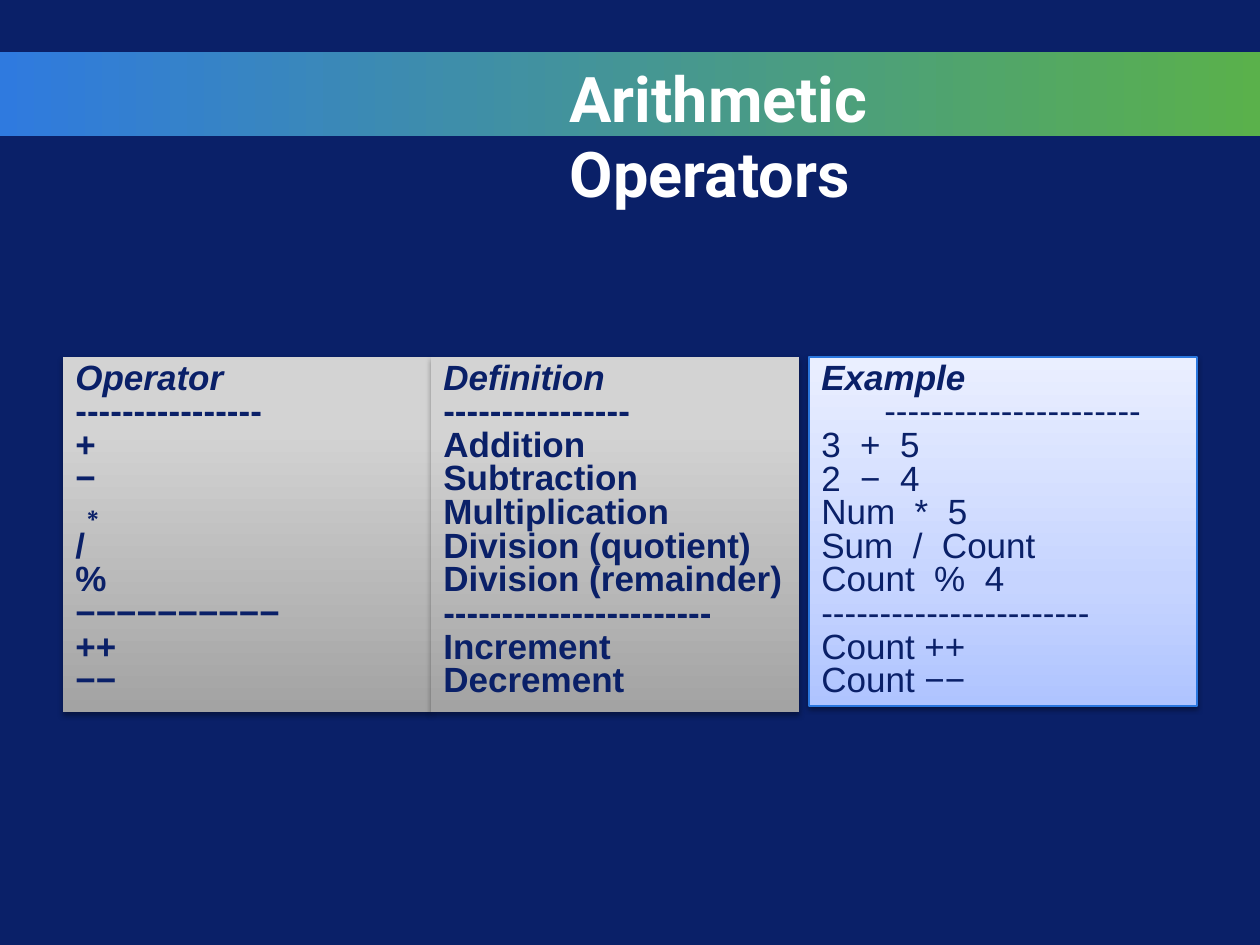
from lxml import etree
from pptx import Presentation
from pptx.dml.color import RGBColor
from pptx.enum.shapes import MSO_SHAPE
from pptx.enum.text import MSO_ANCHOR, MSO_AUTO_SIZE, PP_ALIGN
from pptx.oxml.ns import qn
from pptx.util import Emu, Pt

RECTANGLE = MSO_SHAPE.RECTANGLE
TOP = MSO_ANCHOR.TOP
LEFT = PP_ALIGN.LEFT
NO_AUTOFIT = MSO_AUTO_SIZE.NONE

NAVY = RGBColor(0x0A, 0x20, 0x68)
WHITE = RGBColor(0xFF, 0xFF, 0xFF)
BLUE_LINE = RGBColor(0x2A, 0x77, 0xDE)
BAND_STOPS = [(0, RGBColor(0x2F, 0x7A, 0xDF)), (100, RGBColor(0x5A, 0xB1, 0x4B))]
GRAY_STOPS = [(0, RGBColor(0xA3, 0xA3, 0xA3)), (80, RGBColor(0xD3, 0xD3, 0xD3)),
              (100, RGBColor(0xD4, 0xD4, 0xD4))]
BLUE_STOPS = [(0, RGBColor(0xAF, 0xC4, 0xFF)), (35, RGBColor(0xC6, 0xD4, 0xFF)),
              (100, RGBColor(0xEA, 0xEF, 0xFF))]
PX = 914400 / 126


def px(*lengths):
    """Turn pixel lengths into a list of EMU lengths."""
    return [Emu(round(length * PX)) for length in lengths]


def add_gradient_box(left, top, width, height, stops, angle):
    box = slide.shapes.add_shape(RECTANGLE, *px(left, top, width, height))
    box.shadow.inherit = False
    box.line.fill.background()
    box.fill.gradient()
    box.fill.gradient_angle = angle
    stop_list = box._element.spPr.find(".//" + qn("a:gsLst"))
    for old_stop in list(stop_list):
        stop_list.remove(old_stop)
    for position, color in stops:
        stop = etree.SubElement(stop_list, qn("a:gs"), pos=str(position * 1000))
        etree.SubElement(stop, qn("a:srgbClr"), val=str(color))
    return box


presentation = Presentation()
presentation.slide_width, presentation.slide_height = px(1260, 945)
slide = presentation.slides.add_slide(presentation.slide_layouts[5])
slide.background.fill.solid()
slide.background.fill.fore_color.rgb = NAVY

add_gradient_box(0, 52, 1260, 84, BAND_STOPS, 0)

title = slide.shapes.title
slide.shapes._spTree.append(title._element)  # in front of the band
title.left, title.top, title.width, title.height = px(557, 53, 416, 89)
title.text_frame.text = "Arithmetic Operators"
title.text_frame.word_wrap = True
title.text_frame.auto_size = NO_AUTOFIT
title.text_frame.vertical_anchor = TOP
paragraph = title.text_frame.paragraphs[0]
paragraph.alignment = LEFT
paragraph.font.name = "Roboto"
paragraph.font.size = Pt(36)
paragraph.font.bold = True
paragraph.font.color.rgb = WHITE

# left, width, height, stops, shadow opacity, bold body, hanging indent, text
columns = [
    (809, 388, 349, BLUE_STOPS, 38, False, 63,
     "Example\v----------------------\n3  +  5\n2  −  4\nNum  *  5\nSum  /  Count\n"
     "Count  %  4\n-----------------------\nCount ++\nCount −−"),
    (63, 368, 355, GRAY_STOPS, 35, True, 0,
     "Operator\n----------------\n+\n−\n∗\n/\n%\n−−−−−−−−−−\n++\v−−"),
    (431, 368, 355, GRAY_STOPS, 35, True, 0,
     "Definition\n----------------\nAddition\nSubtraction\nMultiplication\n"
     "Division (quotient)\nDivision (remainder)\n-----------------------\n"
     "Increment\nDecrement"),
]
for left, width, height, stops, opacity, bold, indent, text in columns:
    box = add_gradient_box(left, 357, width, height, stops, 90)
    if stops is BLUE_STOPS:
        box.line.color.rgb = BLUE_LINE
        box.line.width = Pt(0.75)
    effects = box._element.spPr.find(qn("a:effectLst"))
    shadow = etree.SubElement(effects, qn("a:outerShdw"), blurRad=str(Pt(3.1)),
                              dist=str(Pt(1.7)), dir="5400000", rotWithShape="0")
    shadow_color = etree.SubElement(shadow, qn("a:srgbClr"), val="000000")
    etree.SubElement(shadow_color, qn("a:alpha"), val=str(opacity * 1000))

    frame = box.text_frame
    frame.text = text
    frame.word_wrap = True
    frame.auto_size = NO_AUTOFIT
    frame.vertical_anchor = TOP
    for paragraph in frame.paragraphs:
        paragraph.alignment = LEFT
        paragraph.line_spacing = 0.8
        if indent:
            margin = px(indent)[0]
            properties = paragraph._p.get_or_add_pPr()
            properties.set("marL", str(margin))
            properties.set("indent", str(-margin))
        for run in paragraph.runs:
            run.font.name = "Arial"
            run.font.size = Pt(20)
            run.font.bold = bold
            run.font.color.rgb = NAVY
    heading = frame.paragraphs[0].runs[0]
    heading.font.bold = True
    heading.font.italic = True

presentation.save("out.pptx")
